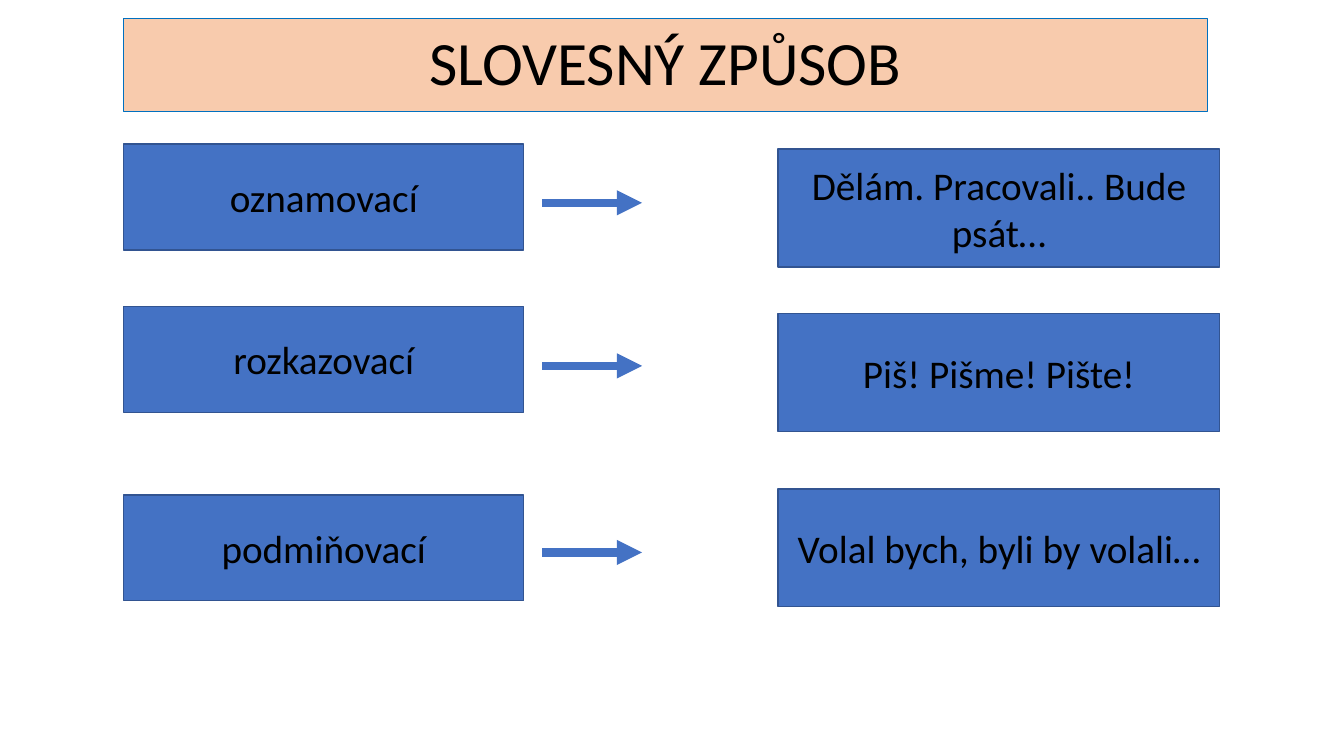
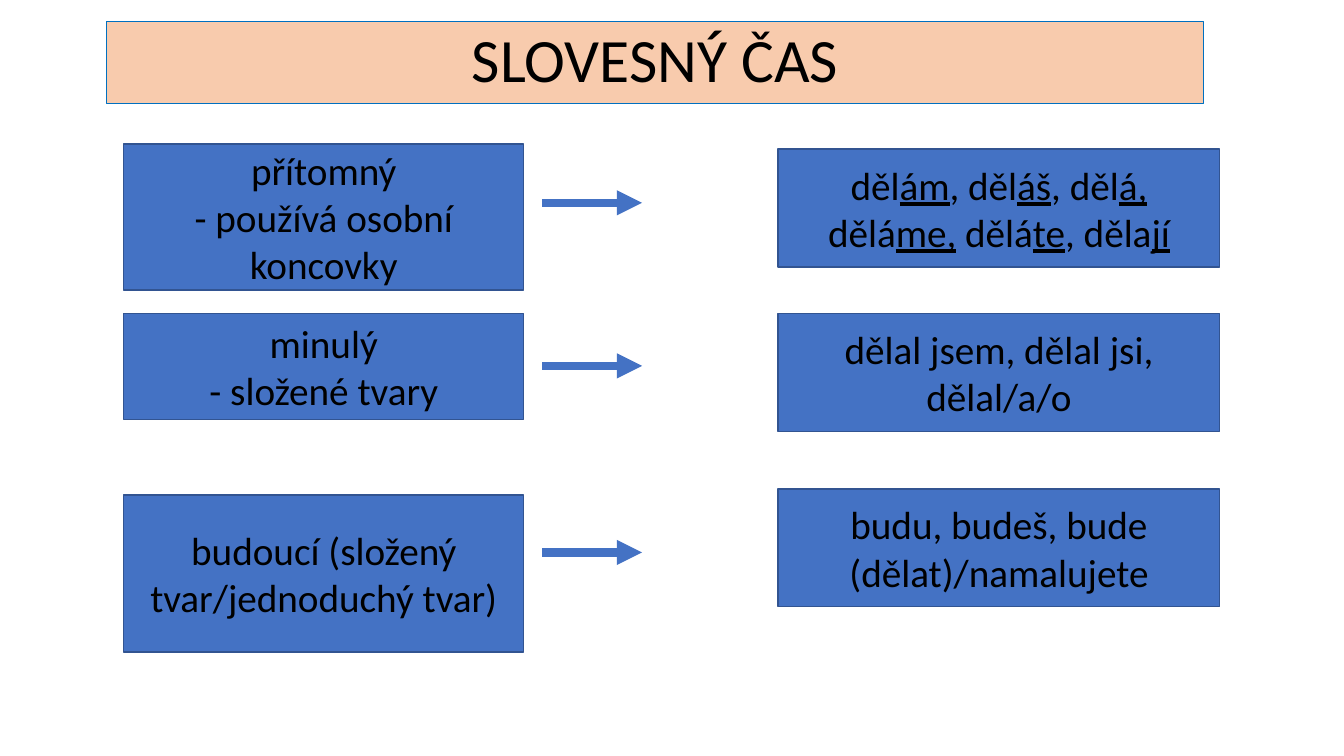
from dataclasses import dataclass

from lxml import etree
from pptx import Presentation
from pptx.dml.color import RGBColor
from pptx.enum.shapes import MSO_CONNECTOR, MSO_SHAPE
from pptx.enum.text import MSO_ANCHOR, MSO_AUTO_SIZE, PP_ALIGN
from pptx.oxml.ns import qn
from pptx.util import Cm, Pt

RECTANGLE = MSO_SHAPE.RECTANGLE
STRAIGHT = MSO_CONNECTOR.STRAIGHT
MIDDLE = MSO_ANCHOR.MIDDLE
NO_AUTOFIT = MSO_AUTO_SIZE.NONE
CENTER = PP_ALIGN.CENTER
TITLE_ONLY = 5

# Columns and rows shared by the slides, in centimetres
CATEGORY_LEFT, CATEGORY_WIDTH = 3.12, 10.08
EXAMPLE_LEFT, EXAMPLE_WIDTH, EXAMPLE_HEIGHT = 19.61, 11.13, 2.97
ARROW_START, ARROW_END = 13.67, 16.18
ARROW_ROWS = (5.11, 9.22, 13.92)
EXAMPLE_ROWS = (3.76, 7.9, 12.32)


@dataclass(frozen=True)
class Theme:
    font: str = "Calibri"
    title_size: int = 44
    body_size: int = 28
    text: RGBColor = RGBColor(0x00, 0x00, 0x00)
    title_fill: RGBColor = RGBColor(0xF8, 0xCB, 0xAD)
    title_line: RGBColor = RGBColor(0x00, 0x70, 0xC0)
    box_fill: RGBColor = RGBColor(0x44, 0x72, 0xC4)
    box_line: RGBColor = RGBColor(0x32, 0x54, 0x91)


class Deck:
    def __init__(self, theme):
        self.theme = theme
        self.presentation = Presentation()
        self.presentation.slide_width = Cm(33.87)
        self.presentation.slide_height = Cm(19.05)
        self.slide = None

    def add_slide(self, heading, left, top, width, height):
        layout = self.presentation.slide_layouts[TITLE_ONLY]
        self.slide = self.presentation.slides.add_slide(layout)
        title = self.slide.shapes.title
        title.left, title.top = Cm(left), Cm(top)
        title.width, title.height = Cm(width), Cm(height)
        self.paint(title, self.theme.title_fill, self.theme.title_line, 0.75)
        self.set_text(title, heading, self.theme.title_size)
        title.text_frame.paragraphs[0].line_spacing = 0.9

    def box(self, text, left, top, width, height):
        box = self.slide.shapes.add_shape(
            RECTANGLE, Cm(left), Cm(top), Cm(width), Cm(height))
        box.shadow.inherit = False
        self.paint(box, self.theme.box_fill, self.theme.box_line, 1)
        self.set_text(box, text, self.theme.body_size)

    def arrow(self, y):
        arrow = self.slide.shapes.add_connector(
            STRAIGHT, Cm(ARROW_START), Cm(y), Cm(ARROW_END), Cm(y))
        arrow.line.color.rgb = self.theme.box_fill
        arrow.line.width = Pt(6)
        properties = arrow._element.spPr
        outline = properties.find(qn("a:ln"))
        etree.SubElement(outline, qn("a:tailEnd"), type="triangle")
        etree.SubElement(properties, qn("a:effectLst"))

    def paint(self, shape, fill, line, line_width):
        shape.fill.solid()
        shape.fill.fore_color.rgb = fill
        shape.line.color.rgb = line
        shape.line.width = Pt(line_width)

    def set_text(self, shape, text, size):
        """Centre the text; parts between underscores are underlined."""
        frame = shape.text_frame
        frame.word_wrap = True
        frame.auto_size = NO_AUTOFIT
        frame.vertical_anchor = MIDDLE
        frame.text = text
        for paragraph in frame.paragraphs:
            paragraph.alignment = CENTER
            parts = paragraph.text.split("_")
            paragraph.runs[0].text = parts[0]
            for part in filter(None, parts[1:]):
                paragraph.add_run().text = part
            for index, run in enumerate(paragraph.runs):
                run.font.name = self.theme.font
                run.font.size = Pt(size)
                run.font.color.rgb = self.theme.text
                if index % 2:
                    run.font.underline = True

    def overview(self, categories, examples):
        """Link each category (text, top, height) to its example."""
        for text, top, height in categories:
            self.box(text, CATEGORY_LEFT, top, CATEGORY_WIDTH, height)
        for y in ARROW_ROWS:
            self.arrow(y)
        for text, top in zip(examples, EXAMPLE_ROWS):
            self.box(text, EXAMPLE_LEFT, top, EXAMPLE_WIDTH, EXAMPLE_HEIGHT)


def main():
    deck = Deck(Theme())

    deck.add_slide("SLOVESNÝ ZPŮSOB", 3.12, 0.46, 27.31, 2.36)
    deck.overview(
        [("oznamovací", 3.63, 2.67),
         ("rozkazovací", 7.72, 2.67),
         ("podmiňovací", 12.47, 2.67)],
        ["Dělám. Pracovali.. Bude psát…",
         "Piš! Pišme! Pište!",
         "Volal bych, byli by volali…"])

    deck.add_slide("SLOVESNÝ ČAS", 2.69, 0.53, 27.64, 2.08)
    deck.overview(
        [("přítomný\n- používá osobní koncovky", 3.63, 3.68),
         ("minulý\n- složené tvary", 7.9, 2.67),
         ("budoucí (složený tvar/jednoduchý tvar)", 12.47, 3.96)],
        ["děl_ám_, děl_áš_, děl_á, _dělá_me,_ dělá_te_, děla_jí_",
         "dělal jsem, dělal jsi, dělal/a/o",
         "budu, budeš, bude (dělat)/namalujete"])

    deck.presentation.save("out.pptx")


if __name__ == "__main__":
    main()
